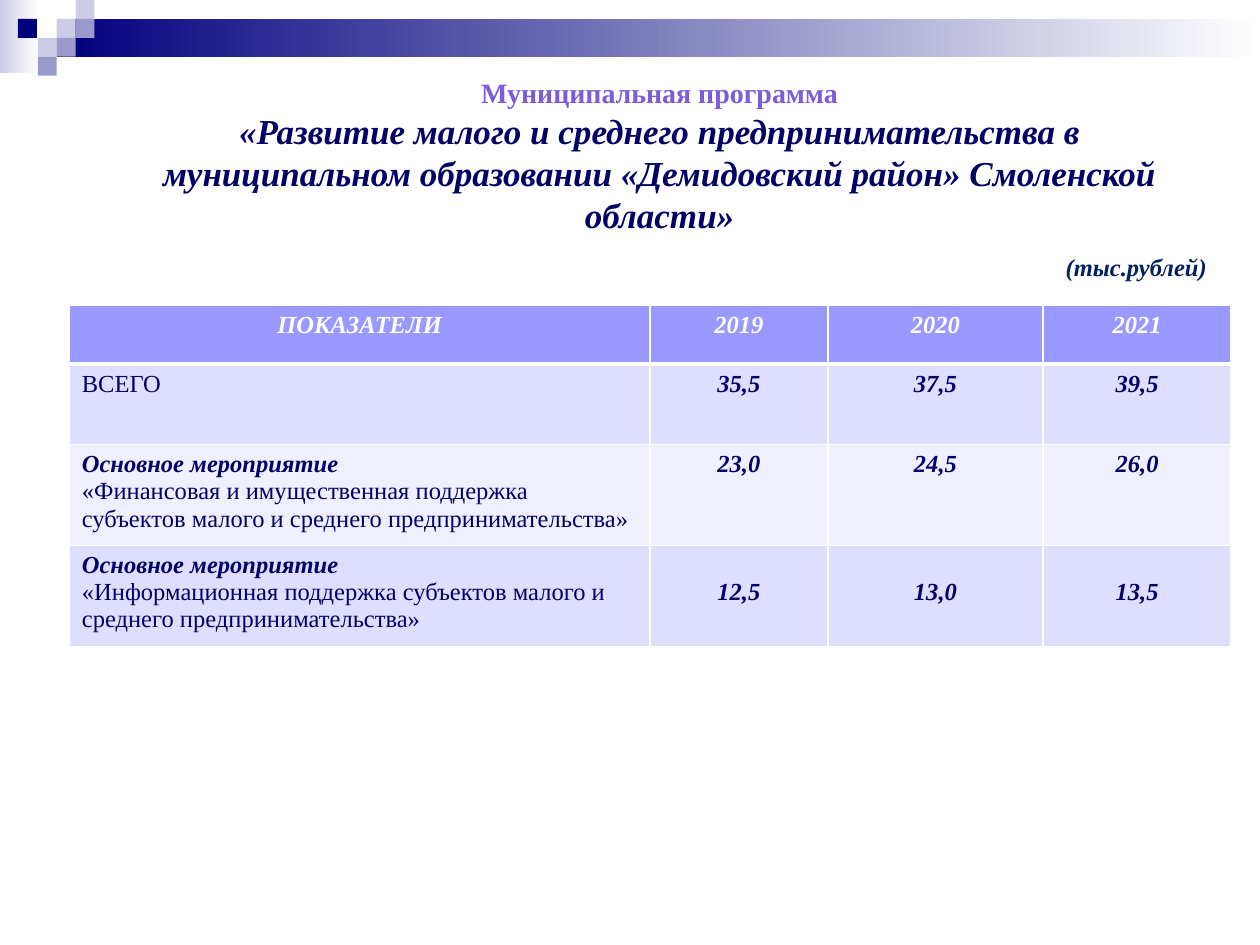
from lxml import etree
from pptx import Presentation
from pptx.dml.color import RGBColor
from pptx.enum.shapes import MSO_SHAPE
from pptx.enum.text import MSO_ANCHOR, MSO_AUTO_SIZE, PP_ALIGN
from pptx.oxml.ns import qn
from pptx.util import Inches, Pt

RECT = MSO_SHAPE.RECTANGLE
LEFT, CENTER = PP_ALIGN.LEFT, PP_ALIGN.CENTER
TOP = MSO_ANCHOR.TOP
NAVY, MID, PALE, WHITE = "00007D", "9999CC", "CCCCE6", "FFFFFF"
INK, HEAD_FILL, BANDS = "000066", "9999FF", ("DEDEFF", "EFEFFF")
FONT = "Times New Roman"


def rgb(value):
    return RGBColor.from_string(value)


def write(p, text, size=14, color=INK, bold=False, italic=False, align=LEFT):
    p.alignment = align
    r = p.add_run()
    r.text = text
    f = r.font
    f.name, f.size, f.bold, f.italic = FONT, Pt(size), bold, italic
    f.color.rgb = rgb(color)


def add_rect(slide, box, *colors):
    """Rectangle with a solid fill, or a left-to-right gradient of two colours."""
    sp = slide.shapes.add_shape(RECT, *map(Inches, box))
    sp.shadow.inherit = False
    sp.line.fill.background()
    if len(colors) == 1:
        sp.fill.solid()
        sp.fill.fore_color.rgb = rgb(colors[0])
        return
    sp.fill.gradient()
    sp.fill.gradient_angle = 0
    for position, (stop, color) in enumerate(zip(sp.fill.gradient_stops, colors)):
        stop.position = position
        stop.color.rgb = rgb(color)


def add_band(slide, left, top, width, unit):
    """Gradient strip with a mosaic of squares on a grid of the given unit."""
    add_rect(slide, (left, top, 0.31, 0.58), PALE, WHITE)
    start = left + 3 * unit
    add_rect(slide, (start, top + unit, width - 3 * unit, 2 * unit), NAVY, WHITE)
    squares = [(3, 1, PALE), (4, 0, PALE), (4, 1, MID), (2, 2, PALE),
               (0.95, 1, NAVY), (3, 2, MID), (2, 3, MID)]
    for col, row, color in squares:
        add_rect(slide, (left + col * unit, top + row * unit, unit, unit), color)


def add_title(slide, box):
    sp = slide.shapes.title
    sp.left, sp.top, sp.width, sp.height = map(Inches, box)
    tf = sp.text_frame
    tf.word_wrap, tf.auto_size, tf.vertical_anchor = True, MSO_AUTO_SIZE.NONE, TOP
    write(tf.paragraphs[0], "Муниципальная программа", size=16, color="7D5CDA",
          bold=True, align=CENTER)
    write(tf.add_paragraph(),
          "«Развитие малого и среднего предпринимательства в муниципальном "
          "образовании «Демидовский район» Смоленской области»",
          size=20, bold=True, italic=True, align=CENTER)


def add_unit_note(slide, box):
    tf = slide.shapes.add_textbox(*map(Inches, box)).text_frame
    tf.word_wrap = False
    write(tf.paragraphs[0], "(тыс.рублей)", color="002060", bold=True, italic=True)


def set_borders(cell, top=1, bottom=1):
    tcPr = cell._tc.get_or_add_tcPr()
    widths = {"a:lnL": 1, "a:lnR": 1, "a:lnT": top, "a:lnB": bottom}
    for i, (tag, width) in enumerate(widths.items()):
        ln = etree.Element(qn(tag), w=str(Pt(width)))
        fill = etree.SubElement(ln, qn("a:solidFill"))
        etree.SubElement(fill, qn("a:srgbClr"), val=WHITE)
        tcPr.insert(i, ln)


def fill_cell(cell, fill, top=1, bottom=1):
    cell.fill.solid()
    cell.fill.fore_color.rgb = rgb(fill)
    set_borders(cell, top, bottom)


def add_budget_table(slide, left, top, cols, rows):
    activity = "Основное мероприятие"
    # Heading lines, description, yearly values, top margin of the values
    data = [
        (None, "ВСЕГО", ("35,5", "37,5", "39,5"), 0.05),
        (activity, "«Финансовая и имущественная поддержка субъектов малого и "
         "среднего предпринимательства»", ("23,0", "24,5", "26,0"), 0.05),
        (activity, "«Информационная поддержка субъектов малого и среднего "
         "предпринимательства»", ("12,5", "13,0", "13,5"), 0.26),
    ]
    table = slide.shapes.add_table(len(rows), len(cols), Inches(left), Inches(top),
                                   Inches(sum(cols)), Inches(sum(rows))).table
    for column, width in zip(table.columns, cols):
        column.width = Inches(width)
    for row, height in zip(table.rows, rows):
        row.height = Inches(height)

    # Header row
    for c, text in enumerate(("ПОКАЗАТЕЛИ", "2019", "2020", "2021")):
        cell = table.cell(0, c)
        fill_cell(cell, HEAD_FILL, bottom=3)
        write(cell.text_frame.paragraphs[0], text, color=WHITE, bold=True,
              italic=True, align=CENTER)

    # Body rows
    for n, (heading, text, values, margin) in enumerate(data, 1):
        for c in range(len(cols)):
            fill_cell(table.cell(n, c), BANDS[(n - 1) % 2], top=3 if n == 1 else 1)
        tf = table.cell(n, 0).text_frame
        p = tf.paragraphs[0]
        if heading:
            write(p, heading, bold=True, italic=True)
            p = tf.add_paragraph()
        write(p, text)
        for c, value in enumerate(values, 1):
            cell = table.cell(n, c)
            cell.margin_top = Inches(margin)
            write(cell.text_frame.paragraphs[0], value, bold=True, italic=True,
                  align=CENTER)


def main():
    prs = Presentation()
    prs.slide_width, prs.slide_height = Inches(10), Inches(7.5)
    slide = prs.slides.add_slide(prs.slide_layouts[5])
    add_band(slide, 0, 0, 10, 0.15)
    add_title(slide, (0.78, 0.55, 8.91, 1.38))
    add_budget_table(slide, 0.55, 2.42, (4.61, 1.41, 1.71, 1.49),
                     (0.47, 0.64, 0.8, 0.8))
    add_unit_note(slide, (8.36, 1.95, 1.33, 0.34))
    prs.save("out.pptx")


if __name__ == "__main__":
    main()
